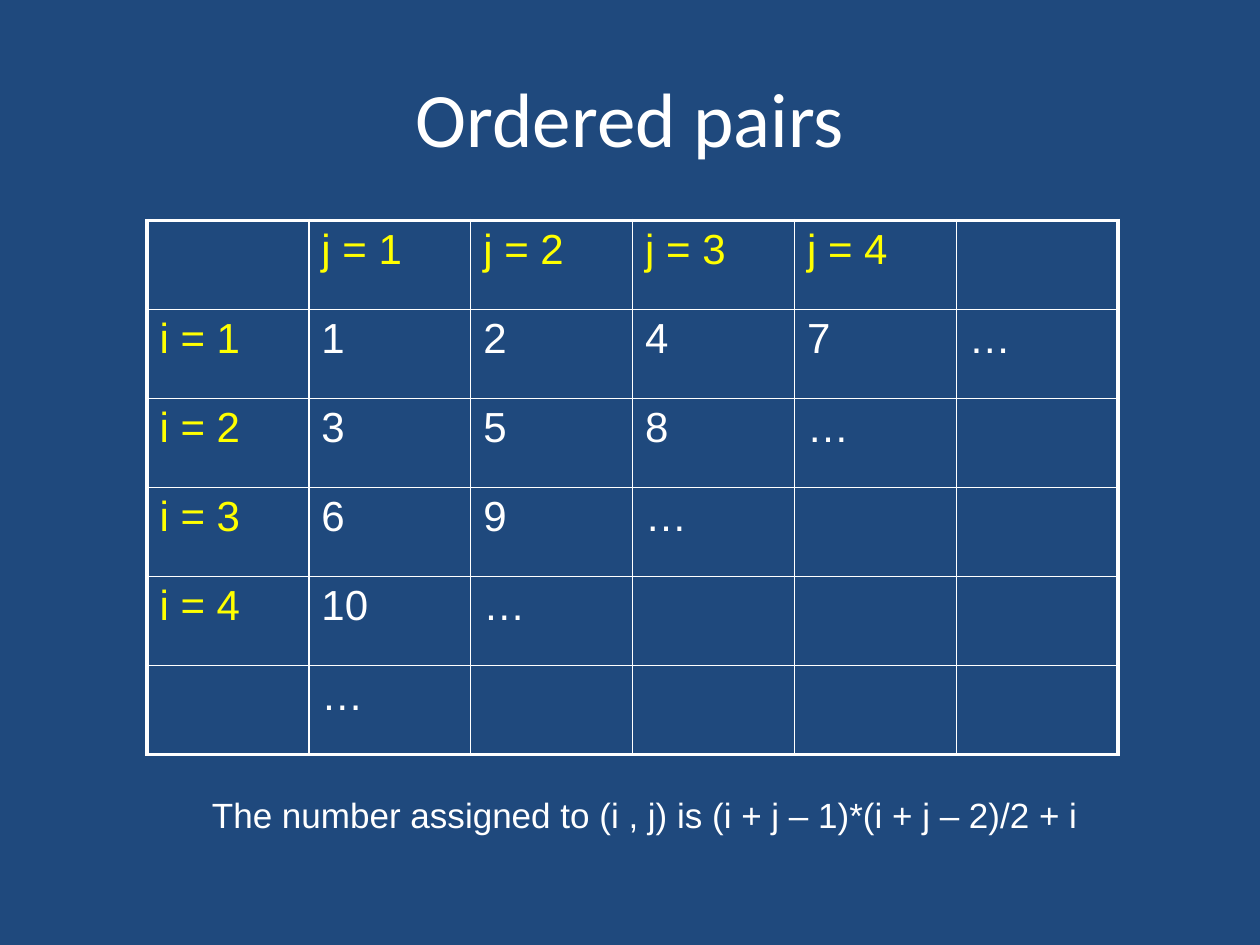
import pptx
import pptx.util
import pptx.dml.color
import pptx.enum.text
import pptx.oxml
import pptx.oxml.ns

Pt = pptx.util.Pt
ALIGN = pptx.enum.text.PP_ALIGN
ANCHOR = pptx.enum.text.MSO_ANCHOR

TITLE = "Ordered pairs"
PAIR_NUMBERS = [
    ["", "j = 1", "j = 2", "j = 3", "j = 4", ""],
    ["i = 1", "1", "2", "4", "7", "…"],
    ["i = 2", "3", "5", "8", "…", ""],
    ["i = 3", "6", "9", "…", "", ""],
    ["i = 4", "10", "…", "", "", ""],
    ["", "…", "", "", "", ""],
]
FORMULA = "The number assigned to (i , j) is (i + j – 1)*(i + j – 2)/2 + i"

THEME = {
    "background": "1F497D", "text": "FFFFFF", "index": "FFFF00", "border": "FFFFFF",
    "title_font": "Calibri", "body_font": "Arial",
    "title_size": 44, "cell_size": 24, "formula_size": 20,
    "outer_border": 2.25, "inner_border": 1,
}
TITLE_BOX = (36, 21.6, 648, 90)
FORMULA_BOX = (114, 450, 528, 31)
GRID_LEFT, GRID_TOP = 84, 126
COLUMN_WIDTH, ROW_HEIGHT = 92.5, 50.9


def rgb(code):
    return pptx.dml.color.RGBColor.from_string(code)


def write(frame, text, *, size, font=THEME["body_font"], color=THEME["text"], align=ALIGN.LEFT):
    paragraph = frame.paragraphs[0]
    paragraph.alignment = align
    run = paragraph.add_run()
    run.text = text
    run.font.size = Pt(size)
    run.font.name = font
    run.font.color.rgb = rgb(color)


def add_text(slide, box, text, *, anchor=ANCHOR.TOP, **text_format):
    frame = slide.shapes.add_textbox(*map(Pt, box)).text_frame
    frame.word_wrap = True
    frame.vertical_anchor = anchor
    write(frame, text, **text_format)


def set_borders(cell, outer_edges):
    """Draw all four cell edges, heavier where the edge is on the outside of the grid."""
    for side in "LRTB":
        width = THEME["outer_border" if outer_edges[side] else "inner_border"]
        cell._tc.get_or_add_tcPr().append(pptx.oxml.parse_xml(
            f'<a:ln{side} {pptx.oxml.ns.nsdecls("a")} w="{int(Pt(width))}">'
            f'<a:solidFill><a:srgbClr val="{THEME["border"]}"/></a:solidFill></a:ln{side}>'))


def add_pair_grid(slide):
    row_count, column_count = len(PAIR_NUMBERS), len(PAIR_NUMBERS[0])
    grid = slide.shapes.add_table(
        row_count, column_count, Pt(GRID_LEFT), Pt(GRID_TOP),
        Pt(COLUMN_WIDTH * column_count), Pt(ROW_HEIGHT * row_count)).table
    grid.first_row = grid.horz_banding = False
    for column in grid.columns:
        column.width = Pt(COLUMN_WIDTH)
    for row in grid.rows:
        row.height = Pt(ROW_HEIGHT)
    for i, numbers in enumerate(PAIR_NUMBERS):
        for j, number in enumerate(numbers):
            cell = grid.cell(i, j)
            set_borders(cell, {"L": j == 0, "R": j == column_count - 1,
                               "T": i == 0, "B": i == row_count - 1})
            cell.fill.background()
            if number:
                color = THEME["index" if i == 0 or j == 0 else "text"]
                write(cell.text_frame, number, size=THEME["cell_size"], color=color)


def main():
    deck = pptx.Presentation()
    deck.slide_width, deck.slide_height = Pt(720), Pt(540)
    slide = deck.slides.add_slide(deck.slide_layouts[6])
    slide.background.fill.solid()
    slide.background.fill.fore_color.rgb = rgb(THEME["background"])
    add_text(slide, TITLE_BOX, TITLE, anchor=ANCHOR.MIDDLE, align=ALIGN.CENTER,
             size=THEME["title_size"], font=THEME["title_font"])
    add_pair_grid(slide)
    add_text(slide, FORMULA_BOX, FORMULA, size=THEME["formula_size"])
    deck.save("out.pptx")


if __name__ == "__main__":
    main()
